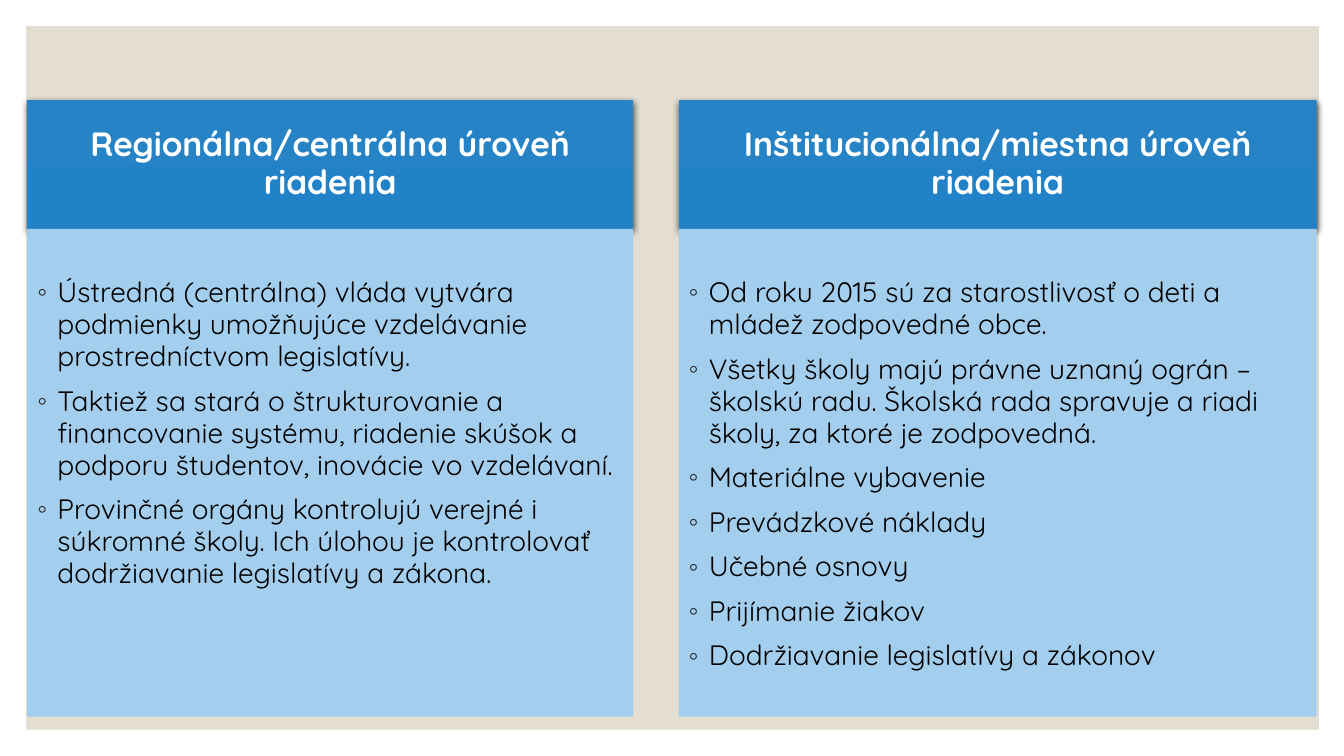
from dataclasses import dataclass

from lxml import etree
from pptx import Presentation
from pptx.dml.color import RGBColor
from pptx.enum.shapes import MSO_SHAPE
from pptx.enum.text import MSO_ANCHOR, MSO_AUTO_SIZE, PP_ALIGN
from pptx.oxml.ns import qn
from pptx.util import Inches, Pt


@dataclass(frozen=True)
class Theme:
    font: str = "Quicksand"
    backdrop: str = "E3DED1"
    header_top: str = "2683C6"
    header_bottom: str = "2282C8"
    header_text: str = "FFFFFF"
    list_fill: str = "A3CEED"
    list_text: str = "000000"
    bullet: str = "262626"
    shadow: str = "000000"
    header_size: int = 24
    list_size: int = 20


THEME = Theme()
HEADER_TOP, HEADER_HEIGHT, LIST_HEIGHT = 0.99, 1.28, 4.84

# left, width, header placeholder, list placeholder, heading, points
COLUMNS = [
    (0.27, 6.01, 1, 2, "Regionálna/centrálna úroveň riadenia", [
        "Ústredná (centrálna) vláda vytvára podmienky umožňujúce vzdelávanie "
        "prostredníctvom legislatívy.",
        "Taktiež sa stará o štrukturovanie a financovanie systému, riadenie "
        "skúšok a podporu študentov, inovácie vo vzdelávaní.",
        "Provinčné orgány kontrolujú verejné i súkromné školy. Ich úlohou je "
        "kontrolovať dodržiavanie legislatívy a zákona.",
    ]),
    (6.73, 6.33, 3, 4, "Inštitucionálna/miestna úroveň riadenia", [
        "Od roku 2015 sú za starostlivosť o deti a mládež zodpovedné obce.",
        "Všetky školy majú právne uznaný ográn – školskú radu. Školská rada "
        "spravuje a riadi školy, za ktoré je zodpovedná.",
        "Materiálne vybavenie",
        "Prevádzkové náklady",
        "Učebné osnovy",
        "Prijímanie žiakov",
        "Dodržiavanie legislatívy a zákonov",
    ]),
]


def rgb(value):
    return RGBColor.from_string(value)


def place(shape, left, top, width, height):
    shape.left, shape.top = Inches(left), Inches(top)
    shape.width, shape.height = Inches(width), Inches(height)


def add_backdrop(slide):
    """Put the beige panel behind the placeholders."""
    backdrop = slide.shapes.add_shape(
        MSO_SHAPE.RECTANGLE, Inches(0.26), Inches(0.26), Inches(12.82), Inches(6.98))
    backdrop.shadow.inherit = False
    backdrop.fill.solid()
    backdrop.fill.fore_color.rgb = rgb(THEME.backdrop)
    backdrop.line.fill.background()
    slide.shapes._spTree.insert(2, backdrop._element)


def add_shadow(shape):
    effects = etree.SubElement(shape._element.spPr, qn("a:effectLst"))
    shadow = etree.SubElement(
        effects, qn("a:outerShdw"), blurRad=str(Pt(4.5)), dist=str(Pt(1.5)),
        dir="5400000", algn="ctr", rotWithShape="0")
    color = etree.SubElement(shadow, qn("a:srgbClr"), val=THEME.shadow)
    etree.SubElement(color, qn("a:alpha"), val="63000")


def add_bullet(paragraph):
    props = paragraph._p.get_or_add_pPr()
    props.set("marL", str(Inches(0.2)))
    props.set("indent", str(-Inches(0.2)))
    color = etree.SubElement(props, qn("a:buClr"))
    etree.SubElement(color, qn("a:srgbClr"), val=THEME.bullet)
    etree.SubElement(props, qn("a:buChar"), char="◦")


def style(paragraph, size, color, bold):
    paragraph.line_spacing = 0.95
    paragraph.font.name = THEME.font
    paragraph.font.size = Pt(size)
    paragraph.font.color.rgb = rgb(color)
    paragraph.font.bold = bold


def fill_header(header, heading):
    header.fill.gradient()
    header.fill.gradient_angle = 270
    for stop, color in zip(header.fill.gradient_stops,
                           (THEME.header_top, THEME.header_bottom)):
        stop.color.rgb = rgb(color)
    add_shadow(header)
    frame = header.text_frame
    frame.auto_size = MSO_AUTO_SIZE.NONE
    frame.vertical_anchor = MSO_ANCHOR.MIDDLE
    frame.text = heading
    title = frame.paragraphs[0]
    title.alignment = PP_ALIGN.CENTER
    title.space_before = Pt(0)
    style(title, THEME.header_size, THEME.header_text, True)


def fill_list(panel, points):
    panel.fill.solid()
    panel.fill.fore_color.rgb = rgb(THEME.list_fill)
    frame = panel.text_frame
    frame.auto_size = MSO_AUTO_SIZE.NONE
    frame.vertical_anchor = MSO_ANCHOR.TOP
    frame.margin_top = Inches(0.48)
    frame.text = "\n".join(points)
    for index, point in enumerate(frame.paragraphs):
        add_bullet(point)
        point.space_before = Pt(9 if index else 0)
        style(point, THEME.list_size, THEME.list_text, False)


def main():
    deck = Presentation()
    deck.slide_width, deck.slide_height = Inches(13.33), Inches(7.5)
    slide = deck.slides.add_slide(deck.slide_layouts.get_by_name("Comparison"))
    title = slide.shapes.title._element
    title.getparent().remove(title)

    add_backdrop(slide)
    slots = {slot.placeholder_format.idx: slot for slot in slide.placeholders}
    for left, width, header_slot, list_slot, heading, points in COLUMNS:
        header, panel = slots[header_slot], slots[list_slot]
        place(header, left, HEADER_TOP, width, HEADER_HEIGHT)
        place(panel, left, HEADER_TOP + HEADER_HEIGHT, width, LIST_HEIGHT)
        fill_header(header, heading)
        fill_list(panel, points)

    deck.save("out.pptx")


if __name__ == "__main__":
    main()
